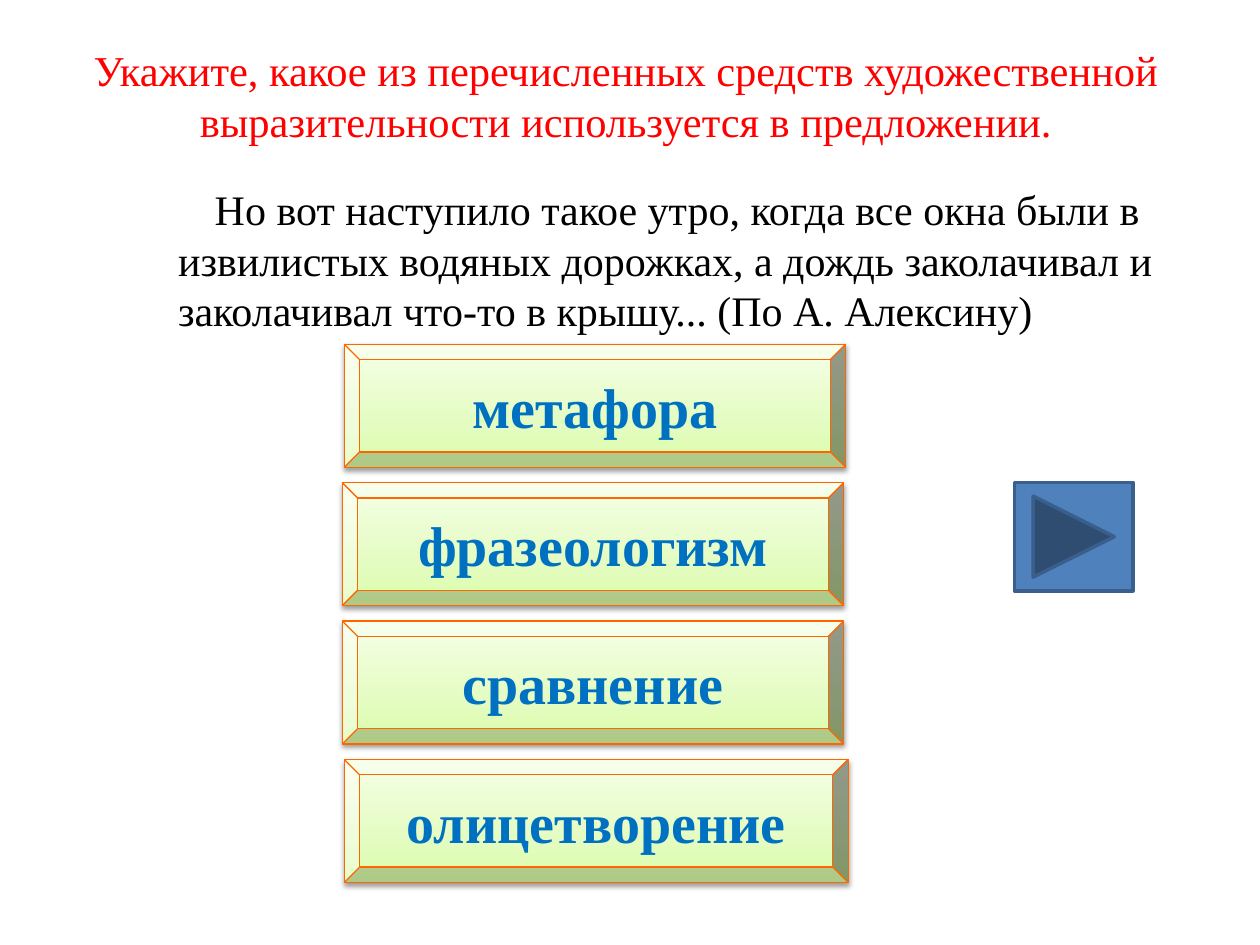
from lxml import etree
from pptx import Presentation
from pptx import util as u
from pptx.dml.color import RGBColor
from pptx.enum import shapes, text
from pptx.oxml import ns

COLORS = {
    "title": "FF0000", "body": "000000", "answer": "0070C0",
    "answer_line": "FF6600", "shadow": "000000",
    "next": "4F81BD", "next_line": "3A5F8C",
}
ANSWER_GRADIENT = [(0, "DAFDA7"), (35, "E4FCC2"), (100, "F5FFE7")]


def rgb(name):
    return RGBColor.from_string(COLORS[name])


def add_xml(parent, tag, **attributes):
    return etree.SubElement(parent, ns.qn(tag), attributes)


def write(frame, words, size, color, bold=False, align=text.PP_ALIGN.CENTER,
          anchor=text.MSO_ANCHOR.MIDDLE):
    frame.word_wrap = True
    frame.vertical_anchor = anchor
    paragraph = frame.paragraphs[0]
    paragraph.alignment = align
    run = paragraph.add_run()
    run.text = words
    run.font.name = "Times New Roman"
    run.font.size = u.Pt(size)
    run.font.bold = bold
    run.font.color.rgb = rgb(color)
    return paragraph


class QuizSlide:
    def __init__(self, slide):
        self.slide = slide

    def text_box(self, place, words, size, color, **style):
        box = self.slide.shapes.add_textbox(*map(u.Cm, place))
        return box.text_frame, write(box.text_frame, words, size, color, **style)

    def button(self, preset, place, line, width):
        button = self.slide.shapes.add_shape(preset, *map(u.Cm, place))
        button.shadow.inherit = False
        button.line.color.rgb = rgb(line)
        button.line.width = u.Pt(width)
        return button

    def answer(self, place, words):
        answer = self.button(shapes.MSO_SHAPE.BEVEL, place, "answer_line", 0.75)
        # Gradient rising from the bottom edge
        answer.fill.gradient()
        answer.fill.gradient_angle = 90
        properties = answer._element.spPr
        stops = properties.find(".//" + ns.qn("a:gsLst"))
        for old_stop in list(stops):
            stops.remove(old_stop)
        for percent, color in ANSWER_GRADIENT:
            stop = add_xml(stops, "a:gs", pos=str(percent * 1000))
            add_xml(stop, "a:srgbClr", val=color)
        # Soft shadow below
        shadow = add_xml(properties.find(ns.qn("a:effectLst")), "a:outerShdw",
                         blurRad=str(u.Pt(3.1)), dist=str(u.Pt(1.6)),
                         dir="5400000", rotWithShape="0")
        tint = add_xml(shadow, "a:srgbClr", val=COLORS["shadow"])
        add_xml(tint, "a:alpha", val="38000")
        write(answer.text_frame, words, 32, "answer", bold=True)

    def next_button(self, place):
        button = self.button(shapes.MSO_SHAPE.ACTION_BUTTON_FORWARD_OR_NEXT,
                             place, "next_line", 2)
        button.fill.solid()
        button.fill.fore_color.rgb = rgb("next")


def main():
    deck = Presentation()
    deck.slide_width, deck.slide_height = u.Cm(25.4), u.Cm(19.05)
    quiz = QuizSlide(deck.slides.add_slide(deck.slide_layouts[6]))

    # Task
    task_frame, _ = quiz.text_box(
        (1.19, 0.41, 22.86, 2.77),
        "Укажите, какое из перечисленных средств художественной "
        "выразительности используется в предложении.", 24.3, "title")
    task_frame.margin_top = u.Cm(0.38)

    # Sentence to analyse
    _, sentence = quiz.text_box(
        (2.39, 3.58, 21.74, 13.44),
        "Но вот наступило такое утро, когда все окна были в извилистых водяных "
        "дорожках, а дождь заколачивал и заколачивал что-то в крышу... "
        "(По А. Алексину)", 24, "body",
        align=text.PP_ALIGN.LEFT, anchor=text.MSO_ANCHOR.TOP)
    indents = sentence._p.get_or_add_pPr()
    indents.set("marL", str(u.Cm(0.95)))
    indents.set("indent", str(u.Cm(0.74)))

    # Answers
    answers = [("метафора", 6.94, 10.11), ("фразеологизм", 6.9, 10.11),
               ("сравнение", 6.9, 10.11), ("олицетворение", 6.94, 10.16)]
    for row, (words, left, width) in enumerate(answers):
        quiz.answer((left, 6.94 + 2.79 * row, width, 2.48), words)

    # Next slide
    quiz.next_button((20.45, 9.73, 2.39, 2.18))

    deck.save("out.pptx")


if __name__ == "__main__":
    main()
